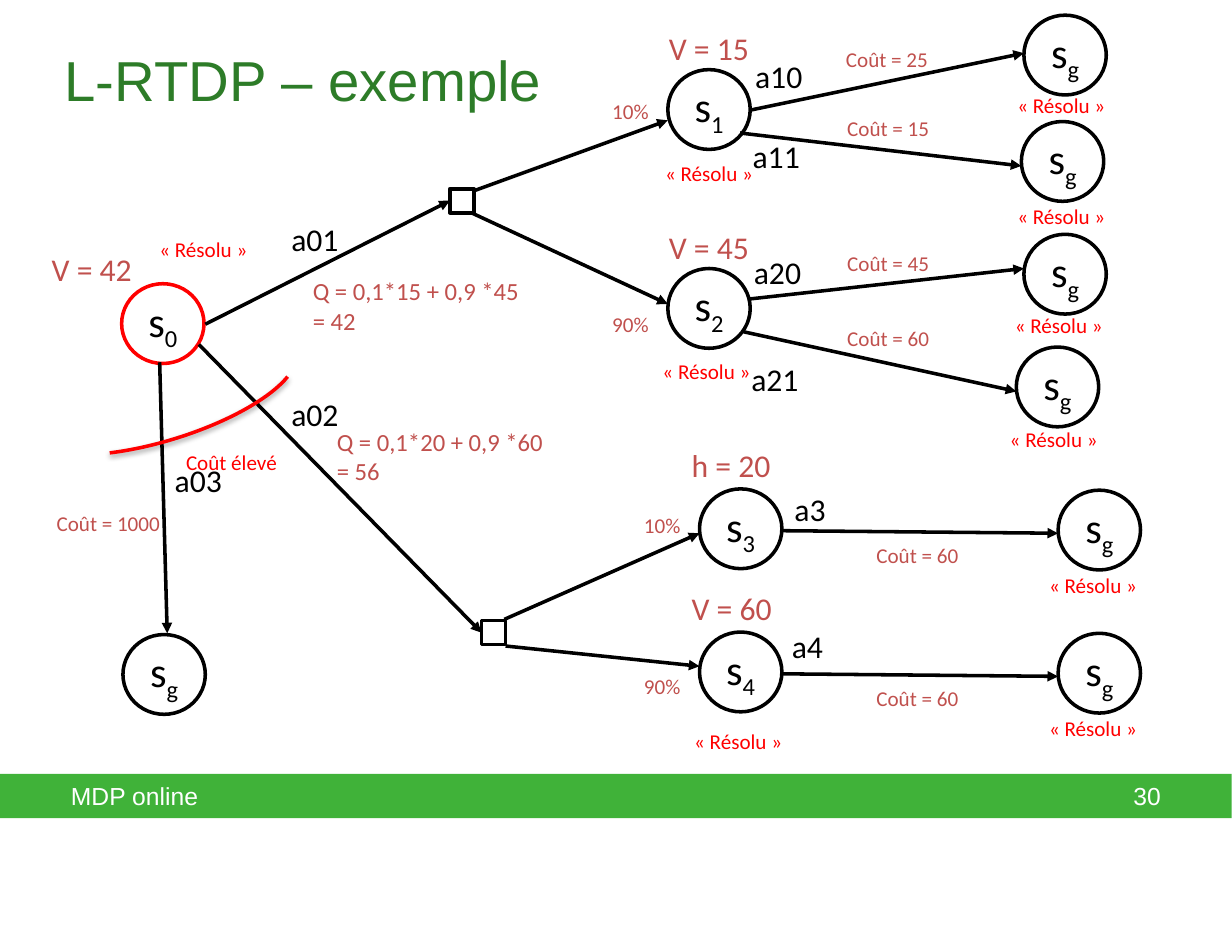
from lxml import etree
from pptx import Presentation
from pptx.dml.color import RGBColor
from pptx.enum.shapes import MSO_CONNECTOR, MSO_SHAPE
from pptx.enum.text import MSO_ANCHOR, MSO_AUTO_SIZE, PP_ALIGN
from pptx.oxml import parse_xml
from pptx.oxml.ns import nsdecls, qn
from pptx.util import Pt

PX = 9144  # EMU per px, 100 px to the inch
STRAIGHT = MSO_CONNECTOR.STRAIGHT
RECTANGLE, ELLIPSE, ARC = MSO_SHAPE.RECTANGLE, MSO_SHAPE.OVAL, MSO_SHAPE.ARC
LEFT, CENTER, RIGHT = PP_ALIGN.LEFT, PP_ALIGN.CENTER, PP_ALIGN.RIGHT
MIDDLE, TOP = MSO_ANCHOR.MIDDLE, MSO_ANCHOR.TOP
GROW, FIXED = MSO_AUTO_SIZE.SHAPE_TO_FIT_TEXT, MSO_AUTO_SIZE.NONE

BLACK, WHITE, RED = "000000", "FFFFFF", "FF0000"
BRICK, BAND_GREEN, TITLE_GREEN = "C0504D", "40B239", "2D7C28"
NODE_W, NODE_H, CHOICE_SIDE = 65, 63, 19
LEFT_SIDE = 1

# Subscript, left, top, outline
STATES = [
    ("0", 96, 224, RED), ("1", 527, 55, BLACK), ("2", 527, 212, BLACK),
    ("3", 552, 386, BLACK), ("4", 552, 499, BLACK),
    ("g", 808, 12, BLACK), ("g", 806, 96, BLACK), ("g", 808, 185, BLACK),
    ("g", 802, 274, BLACK), ("g", 835, 387, BLACK), ("g", 835, 500, BLACK),
    ("g", 97, 501, BLACK),
]
# Start x, start y, end x, end y
ARROWS = [
    (592, 87, 808, 42), (584, 105, 806, 131),
    (592, 236, 808, 212), (587, 262, 802, 309),
    (618, 419, 835, 421), (618, 532, 835, 534),
    (373, 151, 527, 95), (372, 168, 527, 240),
    (398, 489, 552, 421), (399, 510, 552, 526),
    (126, 286, 132, 500),
]
# Square left, top, then start of the arrow that reaches it
CHOICES = [(355, 149, 162, 256), (380, 490, 157, 272)]

# Text, left, top
VALUES = [("V = 42", 31, 192), ("V = 15", 518, 18), ("V = 45", 518, 175),
          ("h = 20", 536, 347), ("V = 60", 536, 460)]
CHANCES = [("10%", 473, 73), ("90%", 473, 241), ("10%", 498, 400), ("90%", 498, 527)]
COSTS = [("Coût = 25", 657, 32), ("Coût = 15", 658, 86), ("Coût = 45", 658, 193),
         ("Coût = 60", 658, 252), ("Coût = 60", 681, 423), ("Coût = 60", 681, 536)]
Q_VALUES = [("Q = 0,1*15 + 0,9 *45\n= 42", 237, 213),
            ("Q = 0,1*20 + 0,9 *60\n= 56", 256, 332)]
SOLVED = [(793, 68), (793, 156), (791, 242), (787, 332), (818, 447), (818, 560),
          (513, 278), (538, 570), (515, 122), (116, 182)]
ACTIONS = [("a01", 220, 169), ("a02", 220, 307), ("a03", 128, 359),
           ("a10", 586, 40), ("a11", 584, 103), ("a20", 585, 195), ("a21", 583, 279)]
LAST_ACTIONS = [("a3", 617, 382), ("a4", 615, 490)]


def rgb(code):
    return RGBColor.from_string(code)


def style_run(run, size, color, font="Calibri"):
    run.font.size, run.font.name = Pt(size), font
    run.font.color.rgb = rgb(color)


def add_text(slide, text, left, top, width, height, *, size, color, font="Calibri",
             align=LEFT, anchor=TOP, wrap=False, fit=GROW, inset_left=10, inset_right=10):
    box = slide.shapes.add_textbox(left * PX, top * PX, width * PX, height * PX)
    frame = box.text_frame
    frame.word_wrap, frame.auto_size, frame.vertical_anchor = wrap, fit, anchor
    frame.margin_left, frame.margin_right = inset_left * PX, inset_right * PX
    frame.text = text
    for paragraph in frame.paragraphs:
        paragraph.alignment = align
        for run in paragraph.runs:
            style_run(run, size, color, font)


def add_figure(slide, kind, left, top, width, height, fill=None, line=None):
    figure = slide.shapes.add_shape(kind, left * PX, top * PX, width * PX, height * PX)
    figure.shadow.inherit = False
    if fill:
        figure.fill.solid()
        figure.fill.fore_color.rgb = rgb(fill)
    else:
        figure.fill.background()
    if line:
        figure.line.color.rgb = rgb(line)
        figure.line.width = Pt(2)
    else:
        figure.line.fill.background()
    return figure


def add_state(slide, subscript, left, top, outline):
    state = add_figure(slide, ELLIPSE, left, top, NODE_W, NODE_H, line=outline)
    frame = state.text_frame
    frame.word_wrap, frame.vertical_anchor = False, MIDDLE
    paragraph = frame.paragraphs[0]
    paragraph.alignment = CENTER
    for part in ("s", subscript):
        run = paragraph.add_run()
        run.text = part
        style_run(run, 24, BLACK)
    run.font._element.set("baseline", "-25000")


def add_arrow(slide, x1, y1, x2, y2):
    arrow = slide.shapes.add_connector(STRAIGHT, x1 * PX, y1 * PX, x2 * PX, y2 * PX)
    arrow.line.color.rgb = rgb(BLACK)
    arrow.line.width = Pt(2)
    etree.SubElement(arrow.line._get_or_add_ln(), qn("a:tailEnd"), type="triangle")
    etree.SubElement(arrow._element.spPr, qn("a:effectLst"))
    return arrow


def add_choice(slide, left, top, start_x, start_y):
    square = add_figure(slide, RECTANGLE, left, top, CHOICE_SIDE, CHOICE_SIDE, WHITE, BLACK)
    arrow = add_arrow(slide, start_x, start_y, left, top + CHOICE_SIDE // 2)
    arrow.end_connect(square, LEFT_SIDE)


def add_cut(slide):
    cut = add_figure(slide, ARC, 90, 200, 74, 222, line=RED)
    cut.rotation = 72.9
    cut.adjustments[0], cut.adjustments[1] = 167.61, 34.84
    effects = cut._element.spPr.find(qn("a:effectLst"))
    effects.append(parse_xml(
        f'<a:outerShdw {nsdecls("a")} blurRad="40000" dist="20000" dir="5400000" '
        'rotWithShape="0"><a:srgbClr val="000000"><a:alpha val="38000"/>'
        '</a:srgbClr></a:outerShdw>'))


def add_labels(slide, labels, width, height, **style):
    for text, left, top in labels:
        add_text(slide, text, left, top, width, height, **style)


def main():
    deck = Presentation()
    deck.slide_width, deck.slide_height = Pt(700), Pt(540)
    slide = deck.slides.add_slide(deck.slide_layouts[6])

    # Footer band and title
    add_figure(slide, RECTANGLE, 0, 611, 972, 35, BAND_GREEN)
    footer = dict(size=14, color=WHITE, font="Arial", anchor=MIDDLE, wrap=True, fit=FIXED)
    add_text(slide, "MDP online", 0, 611, 848, 35, inset_left=56, **footer)
    add_text(slide, "30", 854, 611, 118, 35, inset_right=56, align=RIGHT, **footer)
    add_text(slide, "L-RTDP – exemple", 41, 31, 415, 64,
             size=32, color=TITLE_GREEN, font="Arial")

    # State graph
    for state in STATES:
        add_state(slide, *state)
    for choice in CHOICES:
        add_choice(slide, *choice)
    for arrow in ARROWS:
        add_arrow(slide, *arrow)

    # Values, probabilities and costs
    small = dict(size=12, color=BRICK, align=CENTER)
    add_labels(slide, VALUES, 84, 40, size=18, color=BRICK)
    add_labels(slide, CHANCES, 49, 30, **small)
    add_labels(slide, COSTS, 86, 30, **small)
    add_text(slide, "Coût = 1000", 34, 398, 103, 30, **small)
    add_labels(slide, Q_VALUES, 190, 57, size=14, color=BRICK, wrap=True)

    # Solved marks and the costly cut
    add_cut(slide)
    marks = [("« Résolu »", left, top) for left, top in SOLVED]
    add_labels(slide, marks + [("Coût élevé", 137, 350)], 94, 30,
               size=12, color=RED, wrap=True)

    # Actions
    add_labels(slide, ACTIONS, 58, 40, size=18, color=BLACK)
    add_labels(slide, LAST_ACTIONS, 45, 40, size=18, color=BLACK)

    deck.save("out.pptx")


if __name__ == "__main__":
    main()
